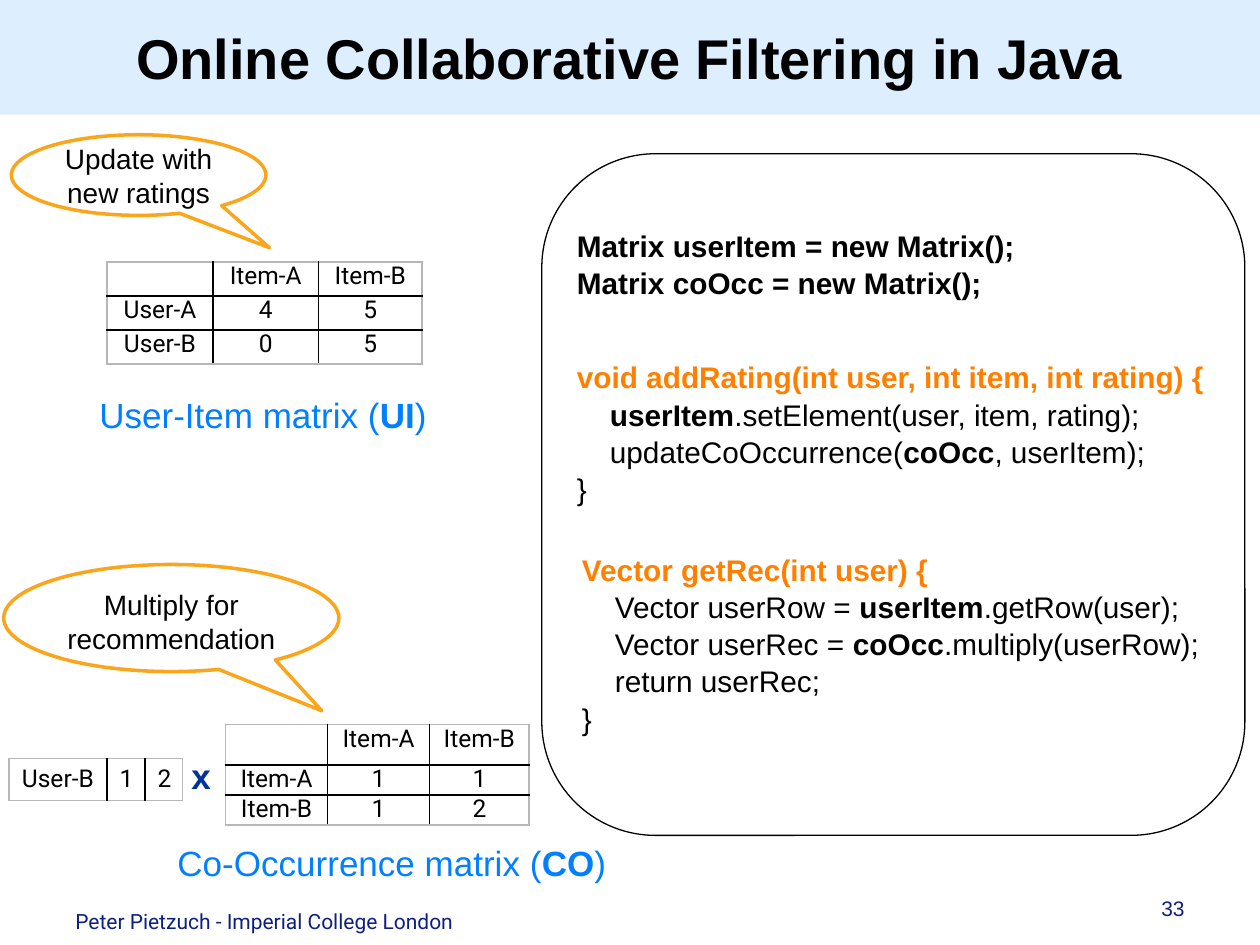
"""Builds a slide on online collaborative filtering in Java."""
from lxml import etree
from pptx import Presentation
from pptx import util as u
from pptx.dml.color import RGBColor
from pptx.enum import shapes, text
from pptx.oxml.ns import qn

COLOURS = {
    "band": "DDEEFF", "black": "000000", "white": "FFFFFF", "code": "FF8000",
    "caption": "0080FF", "callout": "F9A61C", "times": "003399",
    "footer": "0E207F", "frame": "B7B7B7",
}
TITLE = "Online Collaborative Filtering in Java"
CODE_BLOCKS = [
    ((4.48, 1.75, 3.8, 0.67), "black", [
        "**Matrix userItem = new Matrix();**",
        "**Matrix coOcc = new Matrix();**",
    ]),
    ((4.48, 2.79, 5.3, 1.25), "code", [
        "**void addRating(int user, int item, int rating) {**",
        "    **userItem**.setElement(user, item, rating);",
        "    updateCoOccurrence(**coOcc**, userItem);",
        "}",
    ]),
    ((4.52, 4.32, 5.3, 1.53), "code", [
        "**Vector getRec(int user) {**",
        "    Vector userRow = **userItem**.getRow(user);",
        "    Vector userRec = **coOcc**.multiply(userRow);",
        "    return userRec;",
        "}",
    ]),
]
TABLES = [
    ((0.85, 2.08), [0.84, 0.84, 0.82], [0.27, 0.27, 0.27], 0,
     [["", "Item-A", "Item-B"], ["User-A", "4", "5"], ["User-B", "0", "5"]]),
    ((1.79, 5.75), [0.81, 0.81, 0.79], [0.32, 0.24, 0.24], 0,
     [["", "Item-A", "Item-B"], ["Item-A", "1", "1"], ["Item-B", "1", "2"]]),
    ((0.07, 6.02), [0.78, 0.3, 0.3], [0.33], 0.05, [["User-B", "1", "2"]]),
]
CALLOUTS = [
    ((0.09, 1.07, 2.02, 0.64), (0.514, 0.9), 0.05, "Update with new ratings"),
    ((0.03, 4.48, 2.66, 0.85), (0.449, 0.866), 0, "Multiply for recommendation"),
]
LABELS = [
    ((0.69, 3.07, 2.9, 0.44), "User-Item matrix (**UI**)", {"size": 20, "colour": "caption"}),
    ((1.31, 6.63, 3.75, 0.44), "Co-Occurrence matrix (**CO**)", {"size": 20, "colour": "caption"}),
    ((1.42, 5.94, 0.4, 0.44), "**x**", {"size": 20, "colour": "times"}),
    ((0.5, 7.16, 6.06, 0.28), "Peter Pietzuch - Imperial College London",
     {"size": 12, "colour": "footer", "font": "Roboto"}),
    ((7.42, 7.06, 2.08, 0.28), "33", {"size": 12, "colour": "footer", "align": "RIGHT"}),
]


def rgb(name):
    return RGBColor.from_string(COLOURS[name])


def inches(values):
    return [u.Inches(value) for value in values]


def write(frame, lines, size=16, colour="black", lead=None, font="Arial",
          align="LEFT", spacing=None):
    """Write lines into a text frame; double asterisks switch bold on and off."""
    for index, line in enumerate(lines):
        paragraph = frame.paragraphs[0] if index == 0 else frame.add_paragraph()
        paragraph.alignment = getattr(text.PP_ALIGN, align)
        paragraph.line_spacing = spacing
        paragraph.font.size = u.Pt(size)
        for part, words in enumerate(line.split("**")):
            if words:
                run = paragraph.add_run()
                run.text = words
                run.font.name = font
                run.font.size = u.Pt(size)
                run.font.bold = part % 2 == 1
                run.font.color.rgb = rgb(lead if lead and index == 0 else colour)


def add_text(slide, box, lines, **style):
    frame = slide.shapes.add_textbox(*inches(box)).text_frame
    frame.word_wrap = True
    write(frame, lines, **style)


def add_panel(slide, kind, box, fill, line=None, width=1):
    shape = slide.shapes.add_shape(kind, *inches(box))
    shape.shadow.inherit = False
    shape.fill.solid()
    shape.fill.fore_color.rgb = rgb(fill)
    if line:
        shape.line.color.rgb = rgb(line)
        shape.line.width = u.Pt(width)
    else:
        shape.line.fill.background()
    shape.text_frame.vertical_anchor = text.MSO_ANCHOR.MIDDLE
    return shape


def set_borders(cell, outer):
    properties = cell._tc.get_or_add_tcPr()
    for index, (side, is_outer) in enumerate(outer.items()):
        line = etree.Element(qn(f"a:{side}"), w=str(u.Pt(1)))
        fill = etree.SubElement(line, qn("a:solidFill"))
        colour = COLOURS["frame" if is_outer else "black"]
        etree.SubElement(fill, qn("a:srgbClr"), val=colour)
        properties.insert(index, line)


def add_matrix(slide, corner, widths, heights, inset, rows):
    box = (*corner, sum(widths), sum(heights))
    table = slide.shapes.add_table(len(heights), len(widths), *inches(box)).table
    table.first_row = table.horz_banding = False
    for column, width in zip(table.columns, widths):
        column.width = u.Inches(width)
    for row, height in zip(table.rows, heights):
        row.height = u.Inches(height)
    for r, row in enumerate(rows):
        for c, words in enumerate(row):
            cell = table.cell(r, c)
            cell.margin_top = cell.margin_bottom = u.Inches(inset)
            cell.fill.background()
            write(cell.text_frame, [words], size=14, font="Roboto", align="CENTER")
            set_borders(cell, {"lnL": c == 0, "lnR": c == len(row) - 1,
                               "lnT": r == 0, "lnB": r == len(rows) - 1})


def main():
    presentation = Presentation()
    presentation.slide_width, presentation.slide_height = inches((10, 7.5))
    slide = presentation.slides.add_slide(presentation.slide_layouts[6])
    kinds = shapes.MSO_SHAPE

    band = add_panel(slide, kinds.RECTANGLE, (0, 0, 10, 0.91), "band")
    write(band.text_frame, [f"**{TITLE}**"], size=32, align="CENTER")
    add_panel(slide, kinds.ROUNDED_RECTANGLE, (4.3, 1.22, 5.58, 5.41), "white", "black", 0.75)
    for box, lead, lines in CODE_BLOCKS:
        add_text(slide, box, lines, size=17, lead=lead, spacing=1.04)
    for matrix in TABLES:
        add_matrix(slide, *matrix)
    for box, tip, bottom, words in CALLOUTS:
        callout = add_panel(slide, kinds.OVAL_CALLOUT, box, "white", "callout", 2)
        callout.adjustments[0], callout.adjustments[1] = tip
        callout.text_frame.word_wrap = True
        callout.text_frame.margin_bottom = u.Inches(bottom)
        write(callout.text_frame, [words], align="CENTER")
    for box, words, style in LABELS:
        add_text(slide, box, [words], **style)
    presentation.save("out.pptx")


if __name__ == "__main__":
    main()
